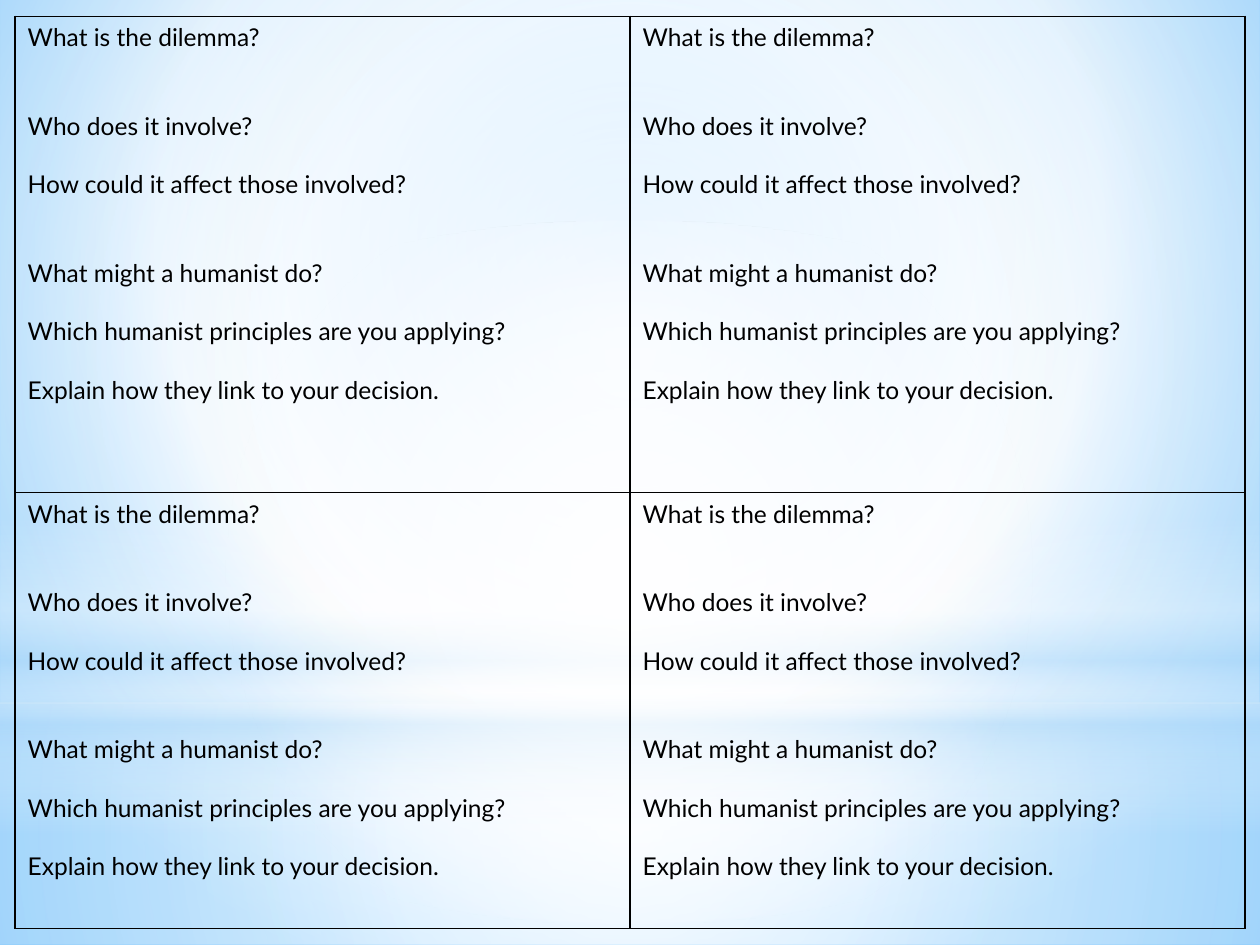
from lxml.etree import SubElement
from pptx import Presentation
from pptx.dml.color import RGBColor
from pptx.enum.shapes import MSO_SHAPE
from pptx.oxml.ns import qn
from pptx.util import Inches, Pt

LINE_PITCH = 16.8
QUESTIONS = [
    ("What is the dilemma?", 0),
    ("Who does it involve?", 2),
    ("How could it affect those involved?", 1),
    ("What might a humanist do?", 2),
    ("Which humanist principles are you applying?", 1),
    ("Explain how they link to your decision.", 1),
]
TABLE_LEFT, TABLE_TOP = 0.12, 0.13
COLUMNS = [4.88, 4.88]
ROWS = [3.78, 3.46]

CENTRE = (50, 50, 50, 50)
BACKDROP = [(0, "9ED5FF", 100), (60, "FFFFFF", 100), (100, "5BB9FF", 100)]
LAYERS = [
    (MSO_SHAPE.RECTANGLE, (0, 5.58, 10, 1.92), CENTRE,
     [(0, "FFFFFF", 91), (37, "FFFFFF", 76), (100, "B4DCFA", 79)]),
    (MSO_SHAPE.RECTANGLE, (0, 0, 10, 5.58), CENTRE,
     [(0, "FFFFFF", 89), (48, "FFFFFF", 62), (100, "B4DCFA", 79)]),
    (MSO_SHAPE.RECTANGLE, (0, 4.12, 10, 2.5), None,
     [(0, "FFFFFF", 0), (29, "FFFFFF", 30), (45, "B4DCFA", 40),
      (55, "FFFFFF", 26), (65, "B4DCFA", 60), (100, "FFFFFF", 0)]),
    (MSO_SHAPE.OVAL, (0, 1.75, 10, 5.58), CENTRE,
     [(0, "FFFFFF", 100), (56, "FFFFFF", 0)]),
]


def color(value):
    return RGBColor.from_string(value)


def add_node(parent, tag, **attributes):
    return SubElement(parent, qn(tag), {key: str(value) for key, value in attributes.items()})


def set_gradient(fill, owner, stops, focus):
    fill.gradient()
    gradient = next(owner.iter(qn("a:gradFill")))
    for child in list(gradient):
        gradient.remove(child)
    stop_list = add_node(gradient, "a:gsLst")
    for position, value, opacity in stops:
        stop = add_node(stop_list, "a:gs", pos=position * 1000)
        tint = add_node(stop, "a:srgbClr", val=value)
        if opacity < 100:
            add_node(tint, "a:alpha", val=opacity * 1000)
    if focus is None:
        add_node(gradient, "a:lin", ang=90 * 60000, scaled=0)
    else:
        circle = add_node(gradient, "a:path", path="circle")
        sides = {side: share * 1000 for side, share in zip("ltrb", focus)}
        add_node(circle, "a:fillToRect", **sides)


def add_layer(page, preset, place, focus, stops):
    layer = page.shapes.add_shape(preset, *map(Inches, place))
    layer.shadow.inherit = False
    layer.line.fill.background()
    set_gradient(layer.fill, layer.element.spPr, stops, focus)


def add_text(para, text, size=14, font="Lato", shade="000000", before=0):
    para.space_before = Pt(before)
    span = para.add_run()
    span.text = text
    span.font.size = Pt(size)
    span.font.name = font
    span.font.color.rgb = color(shade)


def format_cell(cell):
    properties = cell._tc.get_or_add_tcPr()
    for side in ("L", "R", "T", "B"):
        border = add_node(properties, f"a:ln{side}", w=Pt(1))
        add_node(add_node(border, "a:solidFill"), "a:srgbClr", val="000000")
    cell.fill.background()


def fill_cell(cell):
    format_cell(cell)
    frame = cell.text_frame
    for index, (question, blank_lines) in enumerate(QUESTIONS):
        para = frame.add_paragraph() if index else frame.paragraphs[0]
        add_text(para, question, before=blank_lines * LINE_PITCH)


def add_question_table(page):
    place = (TABLE_LEFT, TABLE_TOP, sum(COLUMNS), sum(ROWS))
    table = page.shapes.add_table(len(ROWS), len(COLUMNS), *map(Inches, place)).table
    table.first_row = False
    table.horz_banding = False
    for column, width in zip(table.columns, COLUMNS):
        column.width = Inches(width)
    for row, height in zip(table.rows, ROWS):
        row.height = Inches(height)
    for cell in table.iter_cells():
        fill_cell(cell)


def main():
    deck = Presentation()
    deck.slide_width, deck.slide_height = Inches(10), Inches(7.5)
    page = deck.slides.add_slide(deck.slide_layouts[6])
    set_gradient(page.background.fill, page.element, BACKDROP, (20, 10, 20, 60))
    for preset, place, focus, stops in LAYERS:
        add_layer(page, preset, place, focus, stops)
    add_question_table(page)
    deck.save("out.pptx")


if __name__ == "__main__":
    main()
